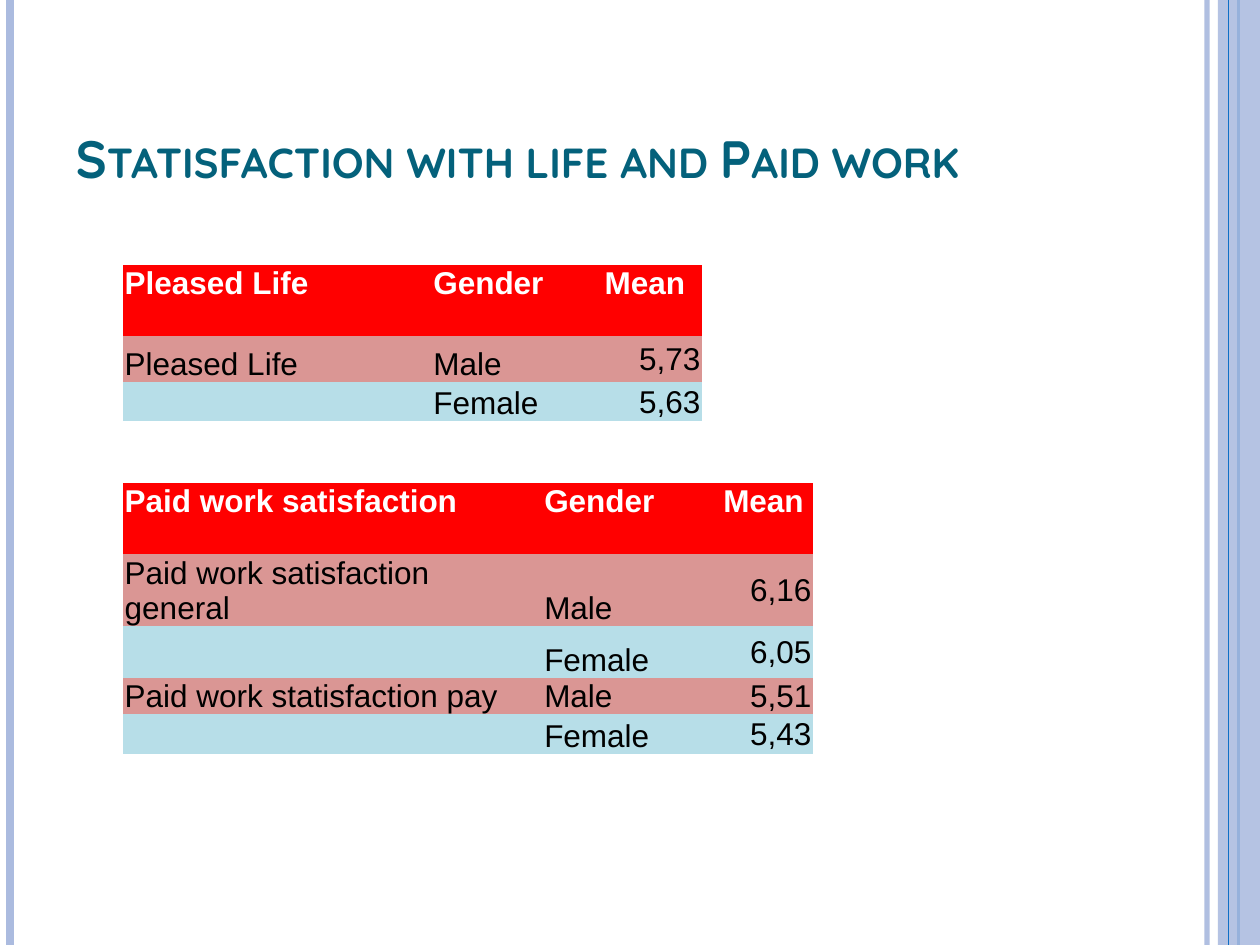
from dataclasses import dataclass
from typing import NamedTuple

from lxml.etree import SubElement
from pptx import Presentation
from pptx.dml.color import RGBColor
from pptx.enum.shapes import MSO_CONNECTOR as Conn, MSO_SHAPE as Shape
from pptx.enum.text import MSO_ANCHOR as Anchor, MSO_AUTO_SIZE as Fit, PP_ALIGN as Align
from pptx.oxml.ns import qn
from pptx.util import Inches, Pt


@dataclass(frozen=True)
class Theme:
    """Colours, fonts and type sizes of the slide."""
    title: str = "04617B"
    rail: str = "ABBBDF"
    accent: str = "0F6FC6"
    header: str = "FF0000"
    bands: tuple = ("DA9694", "B7DEE8")
    light: str = "FFFFFF"
    dark: str = "000000"
    title_font: str = "Quicksand"
    body_font: str = "Arial"
    title_size: int = 30
    body_size: int = 18


class Box(NamedTuple):
    """A region in inches."""
    x: float
    y: float
    w: float
    h: float


THEME = Theme()
PAGE = Box(0, 0, 10, 7.5)
NO_GRID = "{2D5ABB26-0587-4C30-8999-92F81FD0307C}"
GENDER_W, MEAN_W = 1.36, 0.78


def write(tf, text, *, size, font, color, bold=False, align=Align.LEFT, small_caps=False):
    """Put one formatted run into a text frame."""
    p = tf.paragraphs[0]
    p.alignment = align
    r = p.add_run()
    r.text = text
    r.font.size, r.font.name, r.font.bold = Pt(size), font, bold
    r.font.color.rgb = RGBColor.from_string(color)
    if small_caps:
        r.font._element.set("cap", "small")


def set_alpha(s, percent):
    """Make the first solid colour of a shape translucent."""
    color = next(s._element.iter(qn("a:srgbClr")))
    SubElement(color, qn("a:alpha"), val=str(percent * 1000))


def add_rail(slide, box, share, color, width, alpha=100):
    """Draw a full-height line at a share of the box width."""
    x = Inches(box.x + box.w * share)
    s = slide.shapes.add_connector(Conn.STRAIGHT, x, Inches(box.y), x, Inches(box.y + box.h))
    s.line.color.rgb = RGBColor.from_string(color)
    s.line.width = Pt(width)
    SubElement(s._element.spPr, qn("a:effectLst"))
    if alpha < 100:
        set_alpha(s, alpha)


def add_frame(slide, box):
    """Draw the vertical rails and the side band."""
    add_rail(slide, box, 0.958, THEME.rail, 3, 93)
    add_rail(slide, box, 0.008, THEME.rail, 4.5)
    add_rail(slide, box, 0.983, THEME.accent, 1.5)
    band_w = box.w / 30
    s = slide.shapes.add_shape(Shape.RECTANGLE, Inches(box.x + box.w - band_w),
                               Inches(box.y), Inches(band_w), Inches(box.h))
    s.shadow.inherit = False
    s.fill.solid()
    s.fill.fore_color.rgb = RGBColor.from_string(THEME.rail)
    s.line.fill.background()
    set_alpha(s, 87)
    add_rail(slide, box, 0.975, THEME.accent, 0.75)


def add_title(slide, box, text):
    """Fill the title placeholder and fit it to the box."""
    s = slide.shapes.title
    s.left, s.top, s.width, s.height = map(Inches, box)
    tf = s.text_frame
    tf.word_wrap, tf.auto_size, tf.vertical_anchor = True, Fit.NONE, Anchor.BOTTOM
    write(tf, text, size=THEME.title_size, font=THEME.title_font,
          color=THEME.title, bold=True, small_caps=True)


def style_cell(cell, row, col, text, mean_align):
    """Fill and write one cell according to its row and column."""
    is_header, is_mean = row == 0, col == 2
    cell.margin_left = cell.margin_right = cell.margin_top = Inches(0.01)
    cell.margin_bottom = 0
    cell.vertical_anchor = (Anchor.TOP if is_header else
                            Anchor.MIDDLE if is_mean else Anchor.BOTTOM)
    cell.fill.solid()
    fill = THEME.header if is_header else THEME.bands[(row - 1) % 2]
    cell.fill.fore_color.rgb = RGBColor.from_string(fill)
    if text:
        align = Align.LEFT if not is_mean else mean_align if is_header else Align.RIGHT
        write(cell.text_frame, text, size=THEME.body_size, font=THEME.body_font,
              color=THEME.light if is_header else THEME.dark, bold=is_header, align=align)


def add_means(slide, box, heights, rows, mean_align=Align.LEFT):
    """Add a table of means by gender in the box."""
    frame = slide.shapes.add_table(len(rows), 3, *map(Inches, box))
    next(frame._element.iter(qn("a:tableStyleId"))).text = NO_GRID
    table = frame.table
    for column, width in zip(table.columns, (box.w - GENDER_W - MEAN_W, GENDER_W, MEAN_W)):
        column.width = Inches(width)
    for i, (height, values) in enumerate(zip(heights, rows)):
        table.rows[i].height = Inches(height)
        for j, text in enumerate(values):
            style_cell(table.cell(i, j), i, j, text, mean_align)


def main():
    """Build and save the slide."""
    prs = Presentation()
    prs.slide_width, prs.slide_height = Inches(PAGE.w), Inches(PAGE.h)
    slide = prs.slides.add_slide(prs.slide_layouts[5])
    add_frame(slide, PAGE)
    add_title(slide, Box(0.5, 0.3, 8.17, 1.25), "Statisfaction with life and Paid work")
    add_means(slide, Box(0.98, 2.1, 4.59, 1.22), (0.57, 0.36, 0.29), [
        ("Pleased Life", "Gender", "Mean"),
        ("Pleased Life", "Male", "5,73"),
        ("", "Female", "5,63"),
    ])
    add_means(slide, Box(0.98, 3.83, 5.47, 2.13), (0.57, 0.57, 0.41, 0.29, 0.29), [
        ("Paid work satisfaction", "Gender", "Mean"),
        ("Paid work satisfaction general", "Male", "6,16"),
        ("", "Female", "6,05"),
        ("Paid work statisfaction pay", "Male", "5,51"),
        ("", "Female", "5,43"),
    ], mean_align=Align.CENTER)
    prs.save("out.pptx")


if __name__ == "__main__":
    main()
